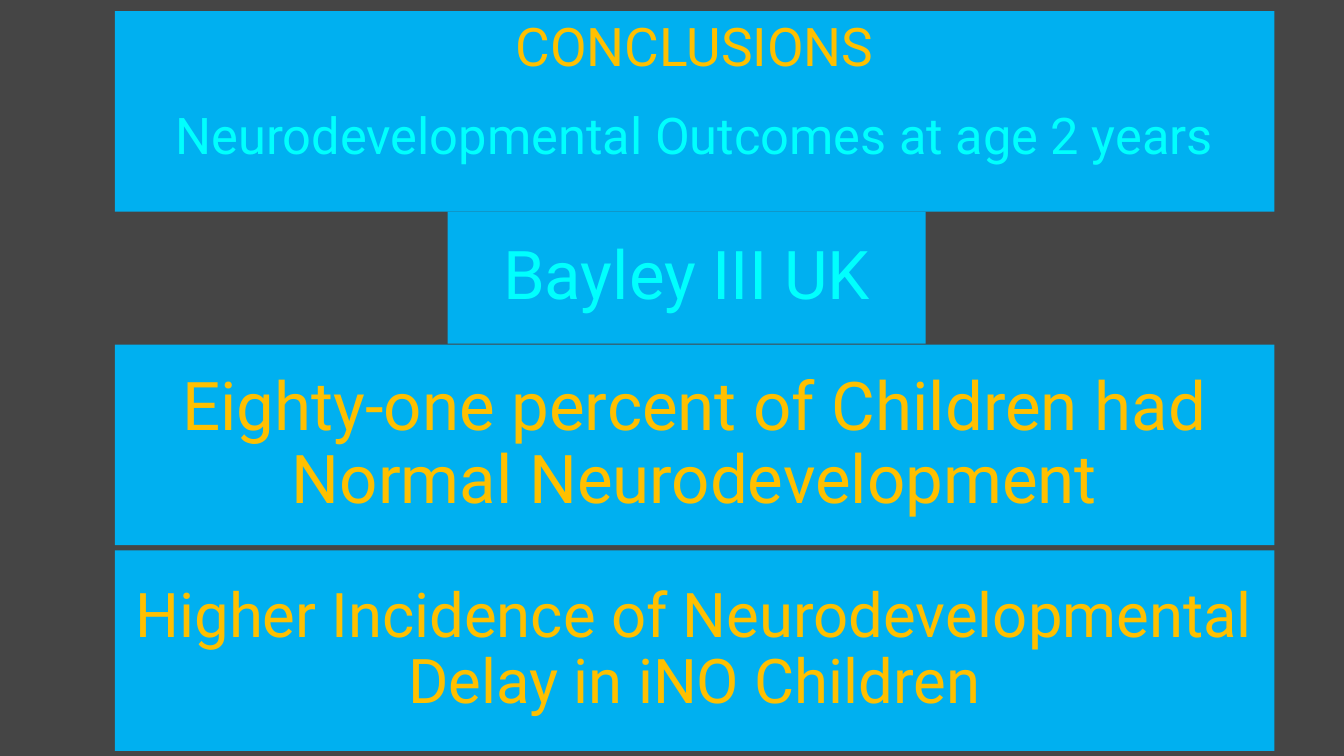
from dataclasses import dataclass

from pptx import Presentation
from pptx import util as u
from pptx.dml.color import RGBColor
from pptx.enum import shapes, text


@dataclass(frozen=True)
class Theme:
    back: str = "454545"
    fill: str = "00B0F0"
    gold: str = "FFC000"
    aqua: str = "00FFFE"
    font: str = "Roboto"
    title: float = 38
    sub: float = 36.1
    large: float = 48
    body: float = 44


@dataclass(frozen=True)
class Line:
    words: str
    size: float
    color: str
    gap: float = 0  # points above


@dataclass(frozen=True)
class Panel:
    top: float  # grid rows
    lines: tuple[Line, ...]
    left: float = 8.55  # grid columns
    wide: float = 86.27
    high: float = 26.53
    lead: float = 0.9
    inset: float = 0  # inches above the text; 0 centres it


T = Theme()

PANELS = (
    Panel(1.47, (Line("CONCLUSIONS", T.title, T.gold),
                 Line("Neurodevelopmental Outcomes at age 2 years",
                      T.sub, T.aqua, gap=32)),
          lead=0.7, inset=0.2),
    Panel(28, (Line("Bayley III UK", T.large, T.aqua),),
          left=33.31, wide=35.56, high=17.47),
    Panel(45.6, (Line("Eighty-one percent of Children had Normal Neurodevelopment",
                      T.large, T.gold),)),
    Panel(72.8, (Line("Higher Incidence of Neurodevelopmental Delay in iNO Children",
                      T.body, T.gold),)),
)

# Slide and its grid of 100 columns by 100 rows
deck = Presentation()
deck.slide_width, deck.slide_height = u.Inches(13.33), u.Inches(7.5)
COL, ROW = deck.slide_width / 100, deck.slide_height / 100


def write(para, line: Line, lead: float) -> None:
    para.text = line.words
    para.alignment = text.PP_ALIGN.CENTER
    para.line_spacing = lead
    if line.gap:
        para.space_before = u.Pt(line.gap)
    for run in para.runs:
        run.font.name = T.font
        run.font.size = u.Pt(line.size)
        run.font.color.rgb = RGBColor.from_string(line.color)


def draw(slide, panel: Panel) -> None:
    box = slide.shapes.add_shape(
        shapes.MSO_SHAPE.RECTANGLE,
        round(panel.left * COL), round(panel.top * ROW),
        round(panel.wide * COL), round(panel.high * ROW))
    box.shadow.inherit = False
    box.fill.solid()
    box.fill.fore_color.rgb = RGBColor.from_string(T.fill)
    box.line.fill.background()

    frame = box.text_frame
    frame.word_wrap = True
    frame.vertical_anchor = text.MSO_ANCHOR.MIDDLE
    if panel.inset:
        frame.vertical_anchor = text.MSO_ANCHOR.TOP
        frame.margin_top = u.Inches(panel.inset)
    for i, line in enumerate(panel.lines):
        para = frame.add_paragraph() if i else frame.paragraphs[0]
        write(para, line, panel.lead)


def main() -> None:
    slide = deck.slides.add_slide(deck.slide_layouts[6])
    slide.background.fill.solid()
    slide.background.fill.fore_color.rgb = RGBColor.from_string(T.back)
    for panel in PANELS:
        draw(slide, panel)
    deck.save("out.pptx")


if __name__ == "__main__":
    main()
